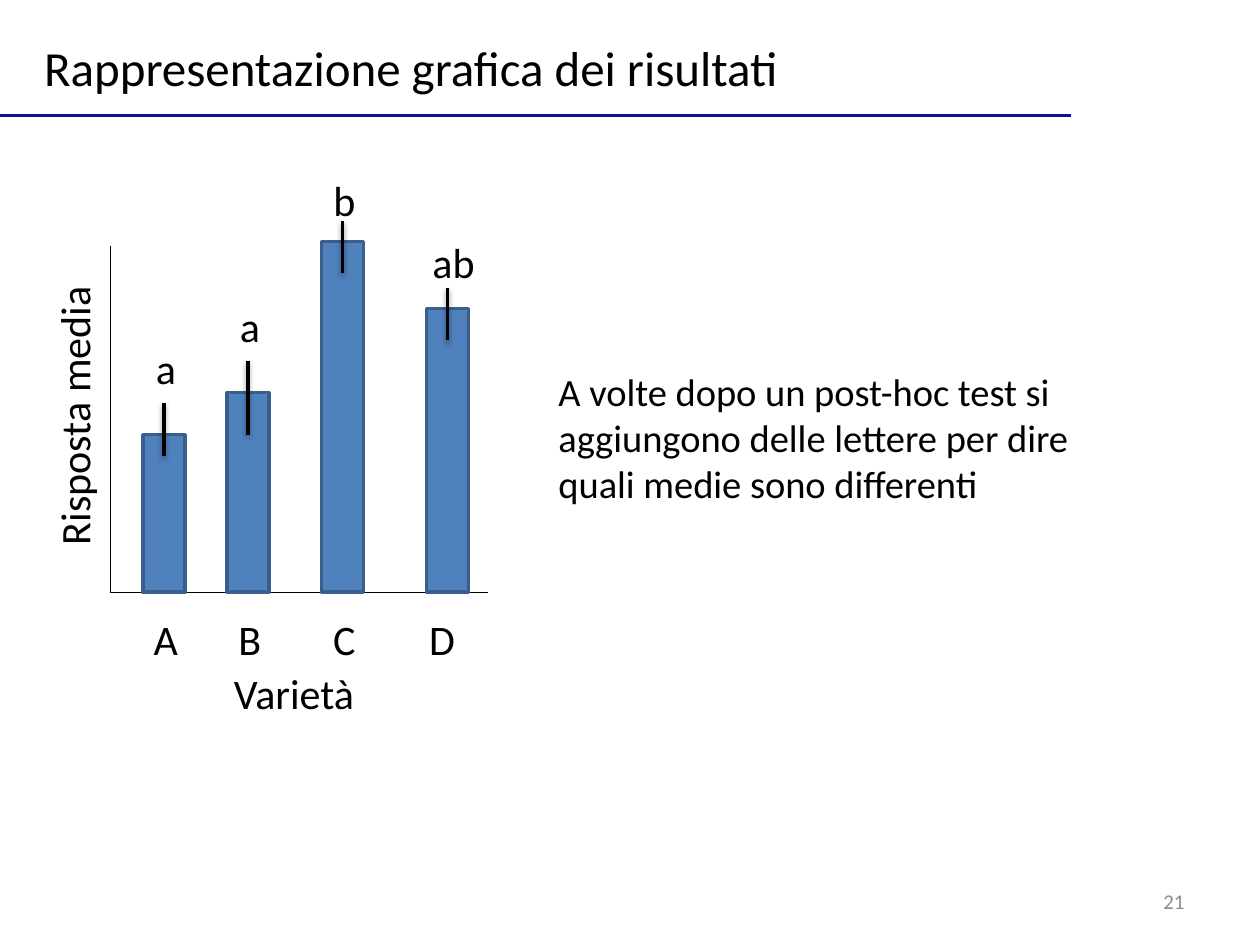
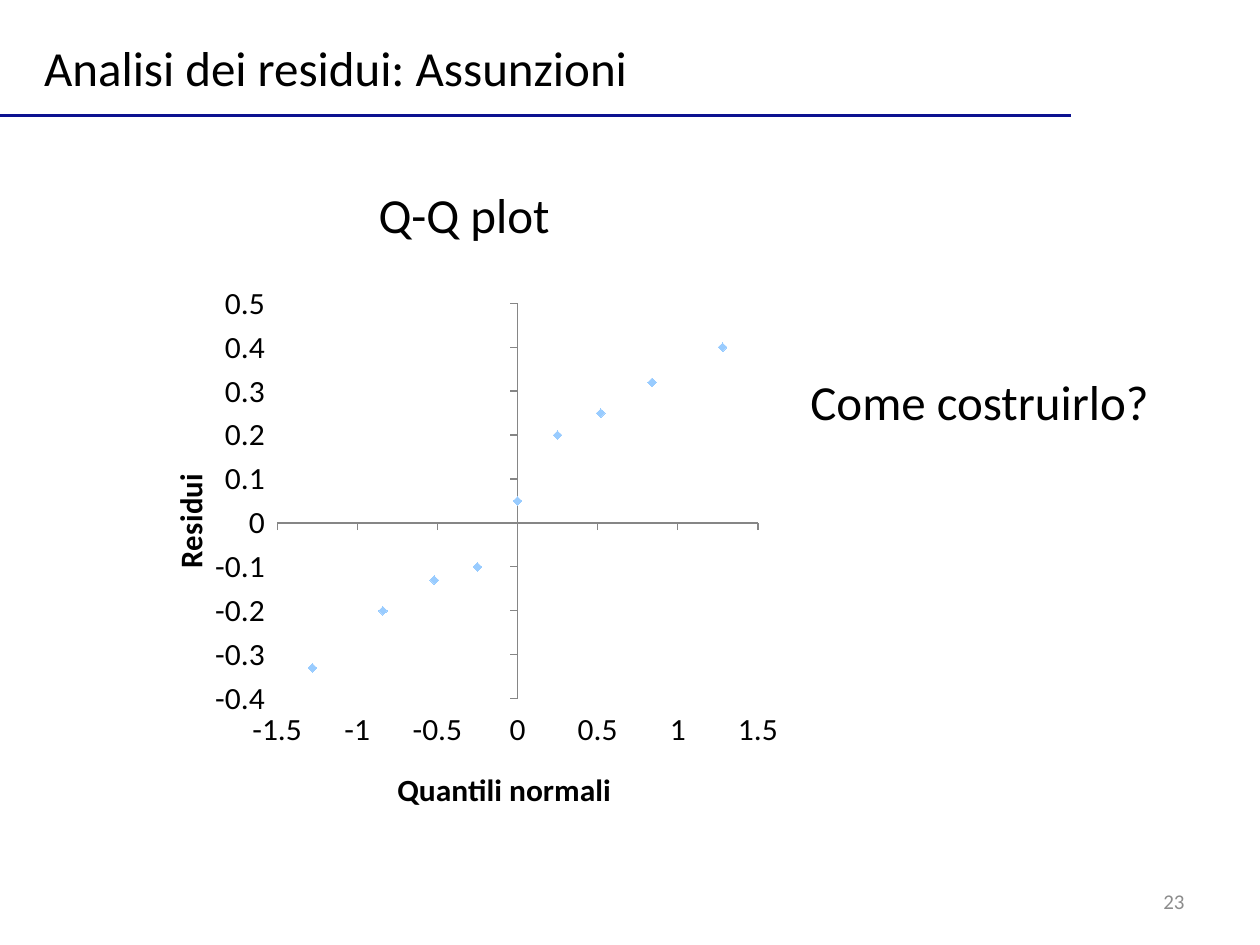
from lxml import etree
from pptx import Presentation
from pptx.chart.data import XyChartData
from pptx.dml.color import RGBColor
from pptx.enum.chart import XL_CHART_TYPE, XL_MARKER_STYLE, XL_TICK_LABEL_POSITION, XL_TICK_MARK
from pptx.enum.shapes import MSO_CONNECTOR, MSO_SHAPE
from pptx.enum.text import MSO_ANCHOR, MSO_AUTO_SIZE, PP_ALIGN
from pptx.oxml import parse_xml
from pptx.oxml.ns import nsdecls, qn
from pptx.util import Inches, Pt

LEFT, CENTER, RIGHT = PP_ALIGN.LEFT, PP_ALIGN.CENTER, PP_ALIGN.RIGHT
MIDDLE, NO_FIT = MSO_ANCHOR.MIDDLE, MSO_AUTO_SIZE.NONE
STRAIGHT, RECT = MSO_CONNECTOR.STRAIGHT, MSO_SHAPE.RECTANGLE
SCATTER, DIAMOND = XL_CHART_TYPE.XY_SCATTER, XL_MARKER_STYLE.DIAMOND
LOW, OUTSIDE, NO_TICK = XL_TICK_LABEL_POSITION.LOW, XL_TICK_MARK.OUTSIDE, XL_TICK_MARK.NONE

FONT = "Calibri"
COLORS = {
    "text": "000000", "paper": "FFFFFF", "number": "8C8C8C", "rule": "0C1290",
    "bar": "4F81BD", "bar_edge": "3A5F8C", "axis": "868686", "point": "99CCFF",
}
COLS, ROWS = 120, 90
WIDTH, HEIGHT = Inches(10), Inches(7.5)

SHADOW = (
    '<a:outerShdw blurRad="39370" dist="20320" dir="5400000" rotWithShape="0">'
    '<a:srgbClr val="000000"><a:alpha val="38000"/></a:srgbClr></a:outerShdw>'
)


def rgb(name):
    return RGBColor.from_string(COLORS[name])


def place(element, inner=False, **shares):
    """Fix a chart part at the given shares of the chart area."""
    for old in element.findall(qn("c:layout")):
        element.remove(old)
    layout = etree.Element(qn("c:layout"))
    manual = etree.SubElement(layout, qn("c:manualLayout"))
    values = {"layoutTarget": "inner"} if inner else {}
    values.update(xMode="edge", yMode="edge", **shares)
    for tag, value in values.items():
        etree.SubElement(manual, qn(f"c:{tag}")).set("val", str(value))
    text = element.find(qn("c:tx"))
    if text is None:
        element.insert(0, layout)
    else:
        text.addnext(layout)


class Deck:
    """Holds the style and the current slide; lengths are grid columns and rows."""

    def __init__(self):
        self.prs = Presentation()
        self.prs.slide_width, self.prs.slide_height = WIDTH, HEIGHT
        self.s = None

    def box(self, col, row, cols, rows):
        return (round(WIDTH * col / COLS), round(HEIGHT * row / ROWS),
                round(WIDTH * cols / COLS), round(HEIGHT * rows / ROWS))

    def slide(self, title, number):
        self.s = self.prs.slides.add_slide(self.prs.slide_layouts[5])
        sp = self.s.shapes.title
        sp.left, sp.top, sp.width, sp.height = self.box(3, 3, 96, 6.8)
        self.fill_text(sp, title, 28)
        self.line(0, 11, 102, 11, "rule", 2)
        self.text(str(number), 86, 83.4, 28, 4.8, 12, RIGHT, color="number")

    def style(self, font, size, color="text", bold=False):
        font.name, font.size, font.bold = FONT, Pt(size), bold
        font.color.rgb = rgb(color)

    def fill_text(self, sp, text, size, align=LEFT, wrap=True, color="text"):
        tf = sp.text_frame
        tf.word_wrap, tf.auto_size, tf.vertical_anchor = wrap, NO_FIT, MIDDLE
        p = tf.paragraphs[0]
        p.alignment = align
        r = p.add_run()
        r.text = text
        self.style(r.font, size, color)

    def text(self, text, col, row, cols, rows, size, align=LEFT, wrap=True, color="text", turn=0):
        sp = self.s.shapes.add_textbox(*self.box(col, row, cols, rows))
        sp.rotation = turn
        self.fill_text(sp, text, size, align, wrap, color)

    def label(self, text, center, row, cols=6, turn=0):
        """One unwrapped line centred on a grid column."""
        self.text(text, center - cols / 2, row, cols, 6, 24, CENTER, wrap=False, turn=turn)

    def line(self, col1, row1, col2, row2, color="text", width=0.75, shadow=False):
        x1, y1, x2, y2 = self.box(col1, row1, col2, row2)
        c = self.s.shapes.add_connector(STRAIGHT, x1, y1, x2, y2)
        c.line.color.rgb, c.line.width = rgb(color), Pt(width)
        effects = SHADOW if shadow else ""
        c._element.spPr.append(parse_xml(f'<a:effectLst {nsdecls("a")}>{effects}</a:effectLst>'))

    def rect(self, col, row, cols, rows, fill, edge=None):
        sp = self.s.shapes.add_shape(RECT, *self.box(col, row, cols, rows))
        sp.shadow.inherit = False
        sp.fill.solid()
        sp.fill.fore_color.rgb = rgb(fill)
        if edge:
            sp.line.color.rgb, sp.line.width = rgb(edge), Pt(2)
        else:
            sp.line.fill.background()
        return sp

    def axis(self, axis, title, low, high, step, **title_shares):
        axis.minimum_scale, axis.maximum_scale, axis.major_unit = low, high, step
        axis.has_major_gridlines = False
        axis.tick_label_position = LOW
        axis.major_tick_mark, axis.minor_tick_mark = OUTSIDE, NO_TICK
        axis.tick_labels.number_format = "General"
        axis.tick_labels.number_format_is_linked = False
        axis.format.line.color.rgb, axis.format.line.width = rgb("axis"), Pt(0.75)
        r = axis.axis_title.text_frame.paragraphs[0].add_run()
        r.text = title
        self.style(r.font, 18, bold=True)
        place(axis.axis_title._element, **title_shares)

    def scatter(self, name, points, col, row, cols, rows):
        data = XyChartData()
        series = data.add_series(name)
        for x, y in points:
            series.add_data_point(x, y)
        chart = self.s.shapes.add_chart(SCATTER, *self.box(col, row, cols, rows), data).chart
        chart.has_title = chart.has_legend = False
        self.style(chart.font, 18)
        plot = chart.plots[0]
        plot.vary_by_categories = False
        dots = plot.series[0]
        dots.smooth = False
        dots.format.line.fill.background()
        dots.marker.style, dots.marker.size = DIAMOND, 5
        dots.marker.format.fill.solid()
        dots.marker.format.fill.fore_color.rgb = rgb("point")
        dots.marker.format.line.color.rgb = rgb("point")
        place(chart._chartSpace.chart.plotArea, inner=True, x=0.215, y=0.057, w=0.735, h=0.742)
        return chart


def results_slide(deck):
    deck.slide("Rappresentazione grafica dei risultati", 21)
    base, axis_col, bar_width = 56.4, 10.5, 4
    deck.line(axis_col, 23.4, axis_col, base)
    deck.line(46.5, base, axis_col, base)
    # variety, its column, letter, its column, bar left, bar top, error top, error length, letter row
    bars = [
        ("A", 15.8, "a", 15.8, 13.6, 41.4, 38.4, 5, 32),
        ("B", 23.8, "a", 23.8, 21.6, 37.4, 34.4, 7, 28),
        ("C", 32.8, "b", 32.8, 30.6, 23, 21, 5, 16),
        ("D", 42.1, "ab", 43.2, 40.6, 29.4, 27.4, 5, 21.9),
    ]
    for variety, variety_col, letter, letter_col, left, top, err_top, err_rows, letter_row in bars:
        deck.rect(left, top, bar_width, base - top, "bar", "bar_edge")
        middle = left + bar_width / 2
        deck.line(middle, err_top, middle, err_top + err_rows, width=2, shadow=True)
        deck.label(variety, variety_col, 57.8)
        deck.label(letter, letter_col, letter_row)
    deck.label("Risposta media", 7, 36.6, 27.2, turn=270)
    deck.label("Varietà", 28, 63, 14)
    deck.text("A volte dopo un post-hoc test si aggiungono delle lettere per dire "
              "quali medie sono differenti", 52, 34.4, 51, 14.5, 22)


def residuals_slide(deck):
    deck.slide("Analisi dei residui: Assunzioni", 23)
    heading = deck.rect(24, 17, 40.4, 6.8, "paper")
    deck.fill_text(heading, "Q-Q plot", 28, CENTER)
    deck.text("Come costruirlo?", 76, 34.8, 40, 6.8, 28)
    quantiles = [-1.28, -0.84, -0.52, -0.25, 0, 0.25, 0.52, 0.84, 1.28]
    residuals = [-0.33, -0.2, -0.13, -0.1, 0.05, 0.2, 0.25, 0.32, 0.4]
    chart = deck.scatter("Series 1", zip(quantiles, residuals), 13, 26, 62.3, 52)
    deck.axis(chart.category_axis, "Quantili normali", -1.5, 1.5, 0.5, x=0.39, y=0.92)
    deck.axis(chart.value_axis, "Residui", -0.4, 0.5, 0.1, x=0.04, y=0.37)


def main():
    deck = Deck()
    results_slide(deck)
    residuals_slide(deck)
    deck.prs.save("out.pptx")


if __name__ == "__main__":
    main()
